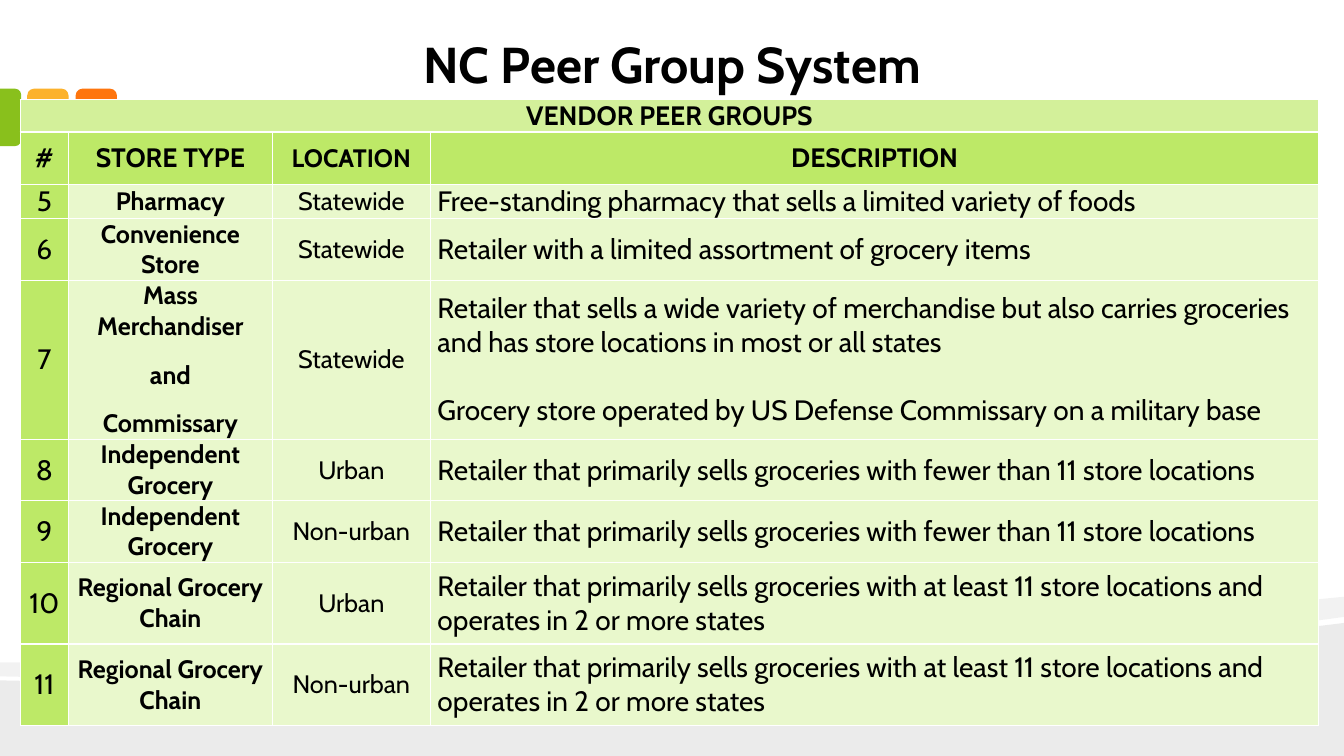
from dataclasses import dataclass

from lxml import etree
from pptx import Presentation
from pptx import util as u
from pptx.dml.color import RGBColor
from pptx.enum import shapes, text
from pptx.oxml.ns import qn

PX = 9144
FONT = "Cabin"
CENTER, LEFT = text.PP_ALIGN.CENTER, text.PP_ALIGN.LEFT
TOP, MIDDLE = text.MSO_ANCHOR.TOP, text.MSO_ANCHOR.MIDDLE
BANNER, HEADER, BODY = "D3F09A", "BDE967", "E9F8CC"
COLUMN_WIDTHS = (48, 202, 157, 881)
BANNER_HEIGHT, HEADER_HEIGHT = 32, 52

Point = tuple[int, int]


@dataclass
class Wave:
    start: Point
    segments: list[tuple[Point, ...]]
    opacity: int


@dataclass
class Tab:
    kind: shapes.MSO_SHAPE
    left: int
    top: int
    width: int
    height: int
    color: str
    rotation: int = 0
    adjustments: tuple[float, ...] = ()


@dataclass
class Style:
    size: int
    bold: bool = False
    align: text.PP_ALIGN = CENTER
    gap: float = 0


@dataclass
class PeerGroup:
    number: str
    store: tuple[str, ...]
    location: str
    description: tuple[str, ...]
    height: int
    store_anchor: text.MSO_ANCHOR = MIDDLE


TITLE = Style(36, bold=True)
HEADING = Style(19, bold=True)
LOCATION_HEADING = Style(18, bold=True)
NUMBER = Style(20)
STORE = Style(18, bold=True, gap=12.8)
LOCATION = Style(18)
DESCRIPTION = Style(20, align=LEFT, gap=24.3)

FEW = ("Retailer that primarily sells groceries with fewer than 11 store locations",)
MANY = ("Retailer that primarily sells groceries with at least 11 store locations "
        "and operates in 2 or more states",)
INDEPENDENT, REGIONAL = ("Independent Grocery",), ("Regional Grocery Chain",)

PEER_GROUPS = [
    PeerGroup("5", ("Pharmacy",), "Statewide",
              ("Free-standing pharmacy that sells a limited variety of foods",), 34),
    PeerGroup("6", ("Convenience Store",), "Statewide",
              ("Retailer with a limited assortment of grocery items",), 61),
    PeerGroup("7", ("Mass Merchandiser", "and", "Commissary"), "Statewide",
              ("Retailer that sells a wide variety of merchandise but also carries "
               "groceries and has store locations in most or all states",
               "Grocery store operated by US Defense Commissary on a military base"), 158),
    PeerGroup("8", INDEPENDENT, "Urban", FEW, 61, TOP),
    PeerGroup("9", INDEPENDENT, "Non-urban", FEW, 61, TOP),
    PeerGroup("10", REGIONAL, "Urban", MANY, 81),
    PeerGroup("11", REGIONAL, "Non-urban", MANY, 81),
]

WAVES = [
    Wave((1333, 618), [((1333, 750),), ((0, 750),), ((0, 675),),
                       ((352, 683), (1042, 655), (1333, 618))], 8),
    Wave((1333, 592), [((1333, 612),),
                       ((1255, 623), (1149, 633), (1029, 641)),
                       ((698, 663), (258, 677), (0, 671)),
                       ((0, 657),),
                       ((652, 662), (971, 627), (1333, 592))], 5),
]

TABS = [
    Tab(shapes.MSO_SHAPE.ROUNDED_RECTANGLE, 75, 88, 41, 57, "FE750E"),
    Tab(shapes.MSO_SHAPE.ROUNDED_RECTANGLE, 27, 88, 41, 57, "FCB22C"),
    Tab(shapes.MSO_SHAPE.ROUND_2_SAME_RECTANGLE, -18, 106, 57, 21, "89C01C", 90, (0.292, 0)),
]


def rgb(color: str) -> RGBColor:
    return RGBColor.from_string(color)


def paint(shape, color: str) -> None:
    shape.shadow.inherit = False
    shape.fill.solid()
    shape.fill.fore_color.rgb = rgb(color)
    shape.line.fill.background()


def draw_wave(slide, wave: Wave) -> None:
    builder = slide.shapes.build_freeform(*wave.start, scale=PX)
    builder.add_line_segments([point for segment in wave.segments for point in segment])
    shape = builder.convert_to_shape()
    outline = next(shape.element.iter(qn("a:path")))
    steps = iter(outline.findall(qn("a:lnTo")))
    for segment in wave.segments:
        parts = [next(steps) for _ in segment]
        if len(parts) == 3:
            curve = etree.Element(qn("a:cubicBezTo"))
            parts[0].addprevious(curve)
            for part in parts:
                curve.append(part[0])
                outline.remove(part)
    etree.SubElement(outline, qn("a:close"))
    paint(shape, "000000")
    tint = next(shape.element.spPr.iter(qn("a:srgbClr")))
    etree.SubElement(tint, qn("a:alpha"), val=str(wave.opacity * 1000))


def draw_tab(slide, tab: Tab) -> None:
    shape = slide.shapes.add_shape(tab.kind, tab.left * PX, tab.top * PX,
                                   tab.width * PX, tab.height * PX)
    shape.rotation = tab.rotation
    for index, value in enumerate(tab.adjustments):
        shape.adjustments[index] = value
    paint(shape, tab.color)


def write(frame, lines: tuple[str, ...], style: Style) -> None:
    for index, line in enumerate(lines):
        paragraph = frame.add_paragraph() if index else frame.paragraphs[0]
        paragraph.alignment = style.align
        paragraph.space_before = u.Pt(style.gap if index else 0)
        run = paragraph.add_run()
        run.text = line
        run.font.name = FONT
        run.font.size = u.Pt(style.size)
        run.font.bold = style.bold
        run.font.color.rgb = rgb("000000")


def draw_title(slide) -> None:
    title = slide.shapes.add_textbox(256 * PX, 5 * PX, 821 * PX, 95 * PX).text_frame
    title.word_wrap = True
    title.vertical_anchor = text.MSO_ANCHOR.BOTTOM
    title.margin_left = title.margin_right = 13 * PX
    title.margin_top = title.margin_bottom = 7 * PX
    write(title, ("NC Peer Group System",), TITLE)


def fill_cell(cell, lines: tuple[str, ...], style: Style, color: str,
              anchor: text.MSO_ANCHOR = MIDDLE) -> None:
    cell.margin_left = cell.margin_right = 7 * PX
    cell.margin_top = cell.margin_bottom = 0
    cell.vertical_anchor = anchor
    write(cell.text_frame, lines, style)
    properties = cell._tc.get_or_add_tcPr()
    for side in ("a:lnL", "a:lnR", "a:lnT", "a:lnB"):
        border = etree.SubElement(properties, qn(side), w=str(u.Pt(1)))
        stroke = etree.SubElement(border, qn("a:solidFill"))
        etree.SubElement(stroke, qn("a:srgbClr"), val="FFFFFF")
    cell.fill.solid()
    cell.fill.fore_color.rgb = rgb(color)


def draw_peer_groups(slide) -> None:
    heights = [BANNER_HEIGHT, HEADER_HEIGHT, *(group.height for group in PEER_GROUPS)]
    table = slide.shapes.add_table(len(heights), len(COLUMN_WIDTHS), 20 * PX, 99 * PX,
                                   sum(COLUMN_WIDTHS) * PX, sum(heights) * PX).table
    for column, width in zip(table.columns, COLUMN_WIDTHS):
        column.width = width * PX
    for row, height in zip(table.rows, heights):
        row.height = height * PX
    table.cell(0, 0).merge(table.cell(0, len(COLUMN_WIDTHS) - 1))
    fill_cell(table.cell(0, 0), ("VENDOR PEER GROUPS",), HEADING, BANNER, TOP)
    for column, heading in enumerate(("#", "STORE TYPE", "LOCATION", "DESCRIPTION")):
        style = LOCATION_HEADING if heading == "LOCATION" else HEADING
        fill_cell(table.cell(1, column), (heading,), style, HEADER)
    for row, group in enumerate(PEER_GROUPS, start=2):
        fill_cell(table.cell(row, 0), (group.number,), NUMBER, HEADER)
        fill_cell(table.cell(row, 1), group.store, STORE, BODY, group.store_anchor)
        fill_cell(table.cell(row, 2), (group.location,), LOCATION, BODY)
        fill_cell(table.cell(row, 3), group.description, DESCRIPTION, BODY)


def main() -> None:
    deck = Presentation()
    deck.slide_width, deck.slide_height = 1333 * PX, 750 * PX
    slide = deck.slides.add_slide(deck.slide_layouts[6])
    for wave in WAVES:
        draw_wave(slide, wave)
    for tab in TABS:
        draw_tab(slide, tab)
    draw_title(slide)
    draw_peer_groups(slide)
    deck.save("out.pptx")


if __name__ == "__main__":
    main()
